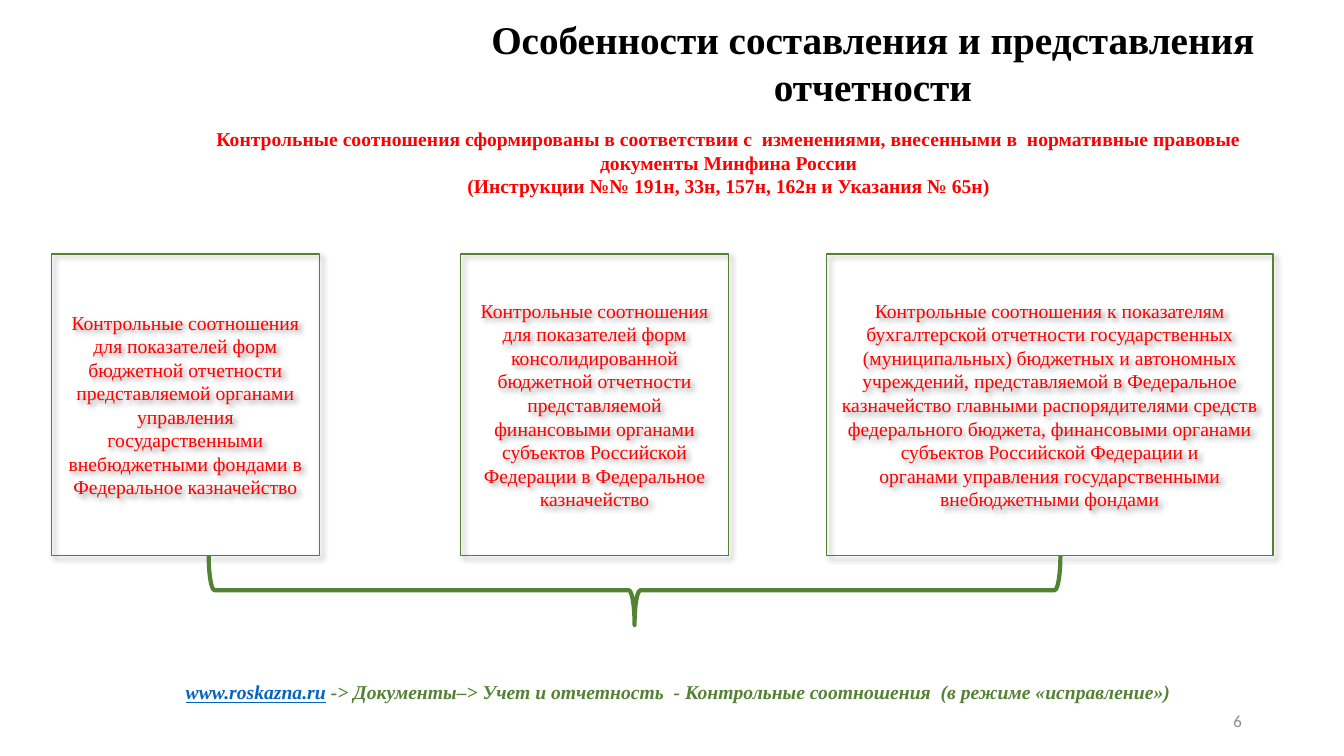
import pptx
import pptx.util
import pptx.dml.color
import pptx.enum.shapes
import pptx.enum.text
import pptx.oxml
import pptx.oxml.ns
from dataclasses import dataclass

Pt = pptx.util.Pt
SHAPES = pptx.enum.shapes.MSO_SHAPE
ALIGN = pptx.enum.text.PP_ALIGN
ANCHOR = pptx.enum.text.MSO_ANCHOR

RED = "FF0000"
GREEN = "548235"
BLUE = "0563C1"
GREY = "8C8C8C"
BLACK = "000000"
SERIF = "Times New Roman"

SHADOW = (
    '<a:outerShdw %s blurRad="50800" dist="38100" dir="2700000" algn="tl" rotWithShape="0">'
    '<a:srgbClr val="000000"><a:alpha val="40000"/></a:srgbClr></a:outerShdw>'
    % pptx.oxml.ns.nsdecls("a")
)


@dataclass
class RatioBox:
    left: float
    width: float
    paragraphs: list[str]


RATIO_BOXES = [
    RatioBox(36.7, 191.5, [
        "Контрольные соотношения для показателей форм бюджетной отчетности "
        "представляемой органами управления государственными внебюджетными "
        "фондами в Федеральное казначейство",
    ]),
    RatioBox(329, 191.5, [
        "Контрольные соотношения для показателей форм",
        "консолидированной бюджетной отчетности представляемой финансовыми "
        "органами субъектов Российской Федерации в Федеральное казначейство",
    ]),
    RatioBox(590.4, 319, [
        "Контрольные соотношения к показателям",
        "бухгалтерской отчетности государственных (муниципальных) бюджетных "
        "и автономных учреждений, представляемой в Федеральное",
        "казначейство главными распорядителями средств федерального бюджета, "
        "финансовыми органами субъектов Российской Федерации и",
        "органами управления государственными",
        "внебюджетными фондами",
    ]),
]


def color(value: str) -> pptx.dml.color.RGBColor:
    return pptx.dml.color.RGBColor.from_string(value)


def add_span(para, text: str, *, size: float = 14, font: str = SERIF, fill: str = RED,
             bold: bool = False, italic: bool = False, underline: bool = False) -> None:
    span = para.add_run()
    span.text = text
    span.font.size = Pt(size)
    span.font.name = font
    span.font.color.rgb = color(fill)
    span.font.bold = bold
    span.font.italic = italic
    span.font.underline = underline


def write(box, paragraphs: list[str], *, align=ALIGN.CENTER, anchor=ANCHOR.TOP, **style) -> None:
    frame = box.text_frame
    frame.word_wrap = True
    frame.auto_size = pptx.enum.text.MSO_AUTO_SIZE.NONE
    frame.vertical_anchor = anchor
    for index, text in enumerate(paragraphs):
        para = frame.add_paragraph() if index else frame.paragraphs[0]
        para.alignment = align
        add_span(para, text, **style)


def add_text(page, left: float, top: float, width: float, height: float,
             paragraphs: list[str], **style):
    box = page.shapes.add_textbox(Pt(left), Pt(top), Pt(width), Pt(height))
    write(box, paragraphs, **style)
    return box


def add_outline(page, kind, left: float, top: float, width: float, height: float,
                weight: float):
    box = page.shapes.add_shape(kind, Pt(left), Pt(top), Pt(width), Pt(height))
    box.shadow.inherit = False
    box.fill.background()
    box.line.color.rgb = color(GREEN)
    box.line.width = Pt(weight)
    return box


def add_ratio_box(page, ratio: RatioBox) -> None:
    box = add_outline(page, SHAPES.RECTANGLE, ratio.left, 181.4, ratio.width, 215.3, 1)
    effects = box.element.spPr.find(pptx.oxml.ns.qn("a:effectLst"))
    effects.append(pptx.oxml.parse_xml(SHADOW))
    write(box, ratio.paragraphs, anchor=ANCHOR.MIDDLE)


def add_title(page) -> None:
    title = page.shapes.title
    title.left, title.top, title.width, title.height = Pt(321.1), Pt(7.2), Pt(604.8), Pt(74.9)
    write(title, ["Особенности составления и представления отчетности"],
          size=28, fill=BLACK, bold=True)


def main() -> None:
    deck = pptx.Presentation()
    deck.slide_width, deck.slide_height = Pt(960), Pt(540)
    page = deck.slides.add_slide(deck.slide_layouts.get_by_name("Title Only"))

    add_title(page)
    add_text(page, 115.9, 87.1, 809.3, 58.3, [
        "Контрольные соотношения сформированы в соответствии с  изменениями, "
        "внесенными в  нормативные правовые документы Минфина России",
        "(Инструкции №№ 191н, 33н, 157н, 162н и Указания № 65н)",
    ], bold=True)

    for ratio in RATIO_BOXES:
        add_ratio_box(page, ratio)

    brace = add_outline(page, SHAPES.RIGHT_BRACE, 428.4, 117.4, 49.7, 608.4, 3)
    brace.rotation = 90

    source = add_text(page, 85.7, 482.4, 797.8, 24.5, ["www.roskazna.ru"],
                      fill=BLUE, bold=True, italic=True, underline=True)
    add_span(source.text_frame.paragraphs[0],
             " -> Документы–> Учет и отчетность  - Контрольные соотношения  "
             "(в режиме «исправление»)", fill=GREEN, bold=True, italic=True)

    add_text(page, 678.2, 500.4, 216, 28.8, ["6"], align=ALIGN.RIGHT,
             anchor=ANCHOR.MIDDLE, size=12, font="Calibri", fill=GREY)

    deck.save("out.pptx")


if __name__ == "__main__":
    main()
